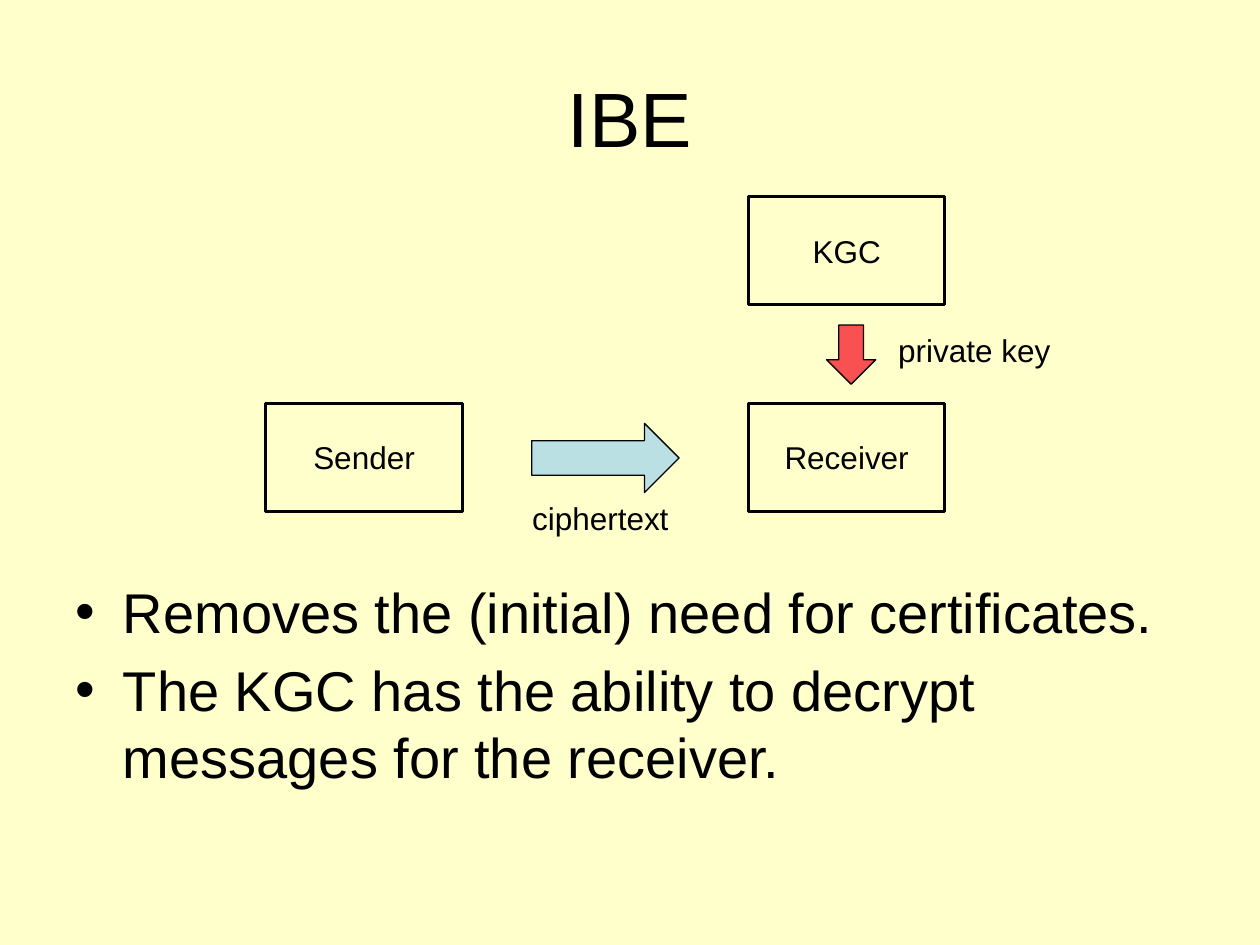
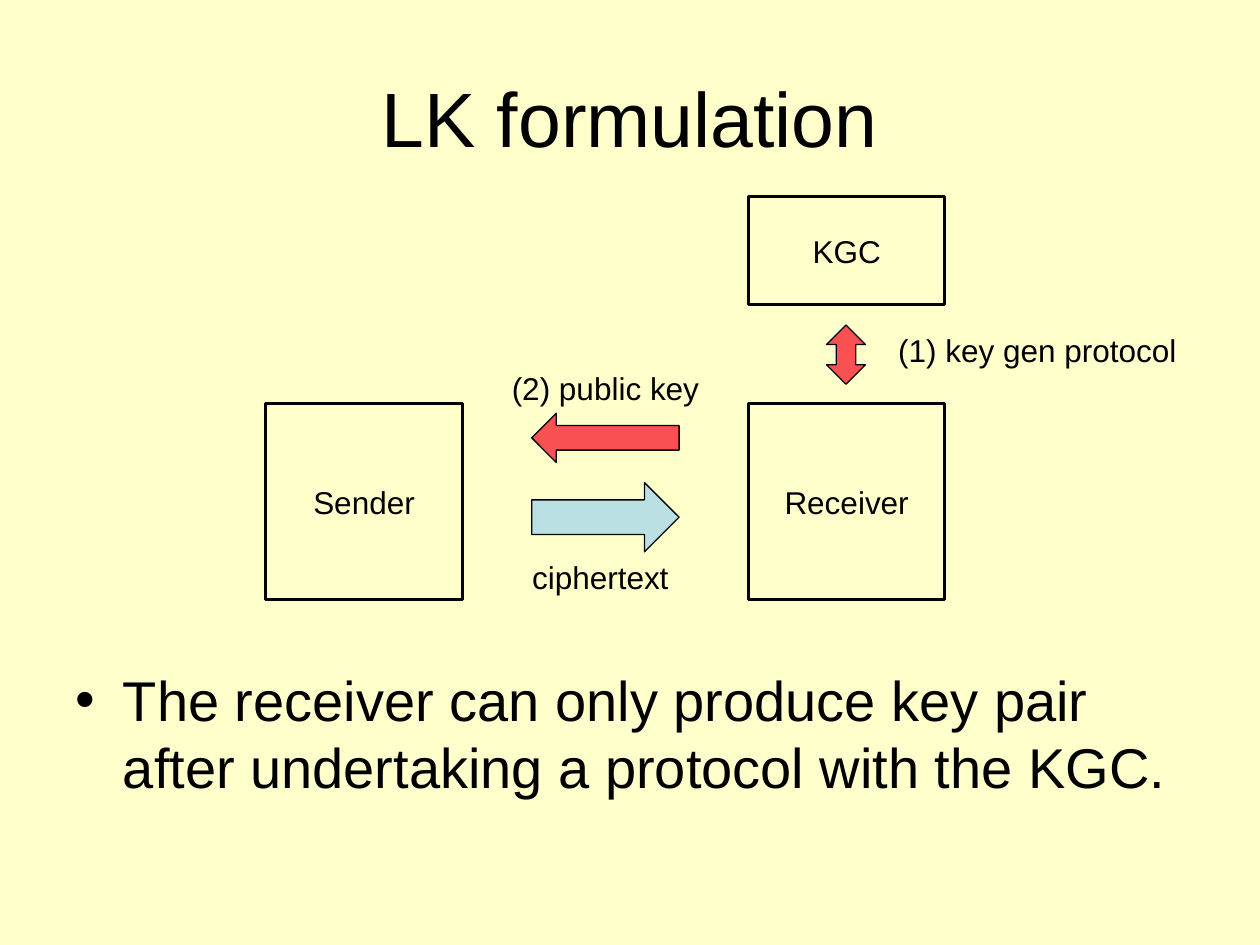
from dataclasses import dataclass

from pptx import Presentation
from pptx.dml.color import RGBColor
from pptx.enum.shapes import MSO_SHAPE
from pptx.enum.text import MSO_ANCHOR, MSO_AUTO_SIZE, PP_ALIGN
from pptx.shapes.autoshape import Shape
from pptx.slide import Slide
from pptx.text.text import TextFrame
from pptx.util import Inches, Pt

CREAM = RGBColor(0xFF, 0xFF, 0xCC)
BLACK = RGBColor(0x00, 0x00, 0x00)
RED = RGBColor(0xF9, 0x51, 0x51)
PALE_BLUE = RGBColor(0xBB, 0xE0, 0xE3)
FONT = "Arial"

MARGIN, CONTENT_W, BODY_BOTTOM = 0.5, 9, 6.7
SENDER_X, RECEIVER_X = 2.11, 5.94
KGC_Y, PARTY_Y = 1.56, 3.2
PARTY_W, PARTY_H = 1.56, 0.86
LINK_X, LINK_W = 4.22, 1.17
KEY_X, KEY_Y, KEY_H = 6.56, 2.58, 0.47
CIPHER_H, LABEL_H = 0.55, 0.4


@dataclass
class Arrow:
    kind: MSO_SHAPE
    x: float
    y: float
    w: float
    h: float
    color: RGBColor


@dataclass
class Label:
    text: str
    x: float
    y: float
    w: float
    align: PP_ALIGN = PP_ALIGN.CENTER


@dataclass
class Scheme:
    title: str
    bullets: list[str]
    body_y: float
    party_h: float
    cipher_y: float
    arrows: list[Arrow]
    labels: list[Label]


SCHEMES = [
    Scheme(
        "IBE",
        ["Removes the (initial) need for certificates.",
         "The KGC has the ability to decrypt messages for the receiver."],
        body_y=4.53, party_h=PARTY_H, cipher_y=3.36,
        arrows=[Arrow(MSO_SHAPE.DOWN_ARROW, KEY_X, KEY_Y, 0.39, KEY_H, RED)],
        labels=[Label("private key", 7.03, KEY_Y, 1.8, PP_ALIGN.LEFT)],
    ),
    Scheme(
        "LK formulation",
        ["The receiver can only produce key pair after undertaking a protocol with the KGC."],
        body_y=5.23, party_h=PARTY_W, cipher_y=3.83,
        arrows=[Arrow(MSO_SHAPE.UP_DOWN_ARROW, KEY_X, KEY_Y, 0.31, KEY_H, RED),
                Arrow(MSO_SHAPE.LEFT_ARROW, LINK_X, 3.28, LINK_W, 0.39, RED)],
        labels=[Label("(1) key gen protocol", 7.03, KEY_Y, 2.58, PP_ALIGN.LEFT),
                Label("(2) public key", 3.83, 2.88, 1.95)],
    ),
]


def place(sp: Shape, x: float, y: float, w: float, h: float) -> None:
    sp.left, sp.top, sp.width, sp.height = map(Inches, (x, y, w, h))


def write(tf: TextFrame, lines: list[str], size: int, align: PP_ALIGN) -> None:
    tf.word_wrap = True
    for i, line in enumerate(lines):
        p = tf.add_paragraph() if i else tf.paragraphs[0]
        p.alignment = align
        if i == 0:
            p.space_before = Pt(0)
        r = p.add_run()
        r.text = line
        r.font.name, r.font.size = FONT, Pt(size)
        r.font.color.rgb = BLACK


def add_outlined(s: Slide, kind: MSO_SHAPE, x: float, y: float,
                 w: float, h: float, line_width: float) -> Shape:
    sp = s.shapes.add_shape(kind, *map(Inches, (x, y, w, h)))
    sp.shadow.inherit = False
    sp.line.color.rgb = BLACK
    sp.line.width = Pt(line_width)
    return sp


def add_party(s: Slide, name: str, x: float, y: float, h: float) -> None:
    sp = add_outlined(s, MSO_SHAPE.RECTANGLE, x, y, PARTY_W, h, 1.75)
    sp.fill.background()
    sp.text_frame.vertical_anchor = MSO_ANCHOR.MIDDLE
    write(sp.text_frame, [name], 18, PP_ALIGN.CENTER)


def add_arrow(s: Slide, arrow: Arrow) -> None:
    sp = add_outlined(s, arrow.kind, arrow.x, arrow.y, arrow.w, arrow.h, 0.75)
    sp.fill.solid()
    sp.fill.fore_color.rgb = arrow.color


def add_label(s: Slide, label: Label) -> None:
    sp = s.shapes.add_textbox(*map(Inches, (label.x, label.y, label.w, LABEL_H)))
    sp.text_frame.auto_size = MSO_AUTO_SIZE.SHAPE_TO_FIT_TEXT
    write(sp.text_frame, [label.text], 18, label.align)


def add_scheme(prs: Presentation, scheme: Scheme) -> None:
    s = prs.slides.add_slide(prs.slide_layouts[1])
    title, body = s.shapes.title, s.placeholders[1]
    place(title, MARGIN, 0.3, CONTENT_W, 1.25)
    title.text_frame.vertical_anchor = MSO_ANCHOR.MIDDLE
    write(title.text_frame, [scheme.title], 44, PP_ALIGN.CENTER)
    place(body, MARGIN, scheme.body_y, CONTENT_W, BODY_BOTTOM - scheme.body_y)
    write(body.text_frame, scheme.bullets, 32, PP_ALIGN.LEFT)
    for tf in (title.text_frame, body.text_frame):
        tf.auto_size = MSO_AUTO_SIZE.NONE

    add_party(s, "KGC", RECEIVER_X, KGC_Y, PARTY_H)
    add_party(s, "Receiver", RECEIVER_X, PARTY_Y, scheme.party_h)
    add_party(s, "Sender", SENDER_X, PARTY_Y, scheme.party_h)

    ciphertext = Arrow(MSO_SHAPE.RIGHT_ARROW, LINK_X, scheme.cipher_y,
                       LINK_W, CIPHER_H, PALE_BLUE)
    for arrow in [ciphertext, *scheme.arrows]:
        add_arrow(s, arrow)
    caption = Label("ciphertext", 4.06, scheme.cipher_y + CIPHER_H, 1.41)
    for label in [caption, *scheme.labels]:
        add_label(s, label)


def main() -> None:
    prs = Presentation()
    prs.slide_width, prs.slide_height = Inches(10), Inches(7.5)
    fill = prs.slide_master.background.fill
    fill.solid()
    fill.fore_color.rgb = CREAM
    for scheme in SCHEMES:
        add_scheme(prs, scheme)
    prs.save("out.pptx")


if __name__ == "__main__":
    main()
